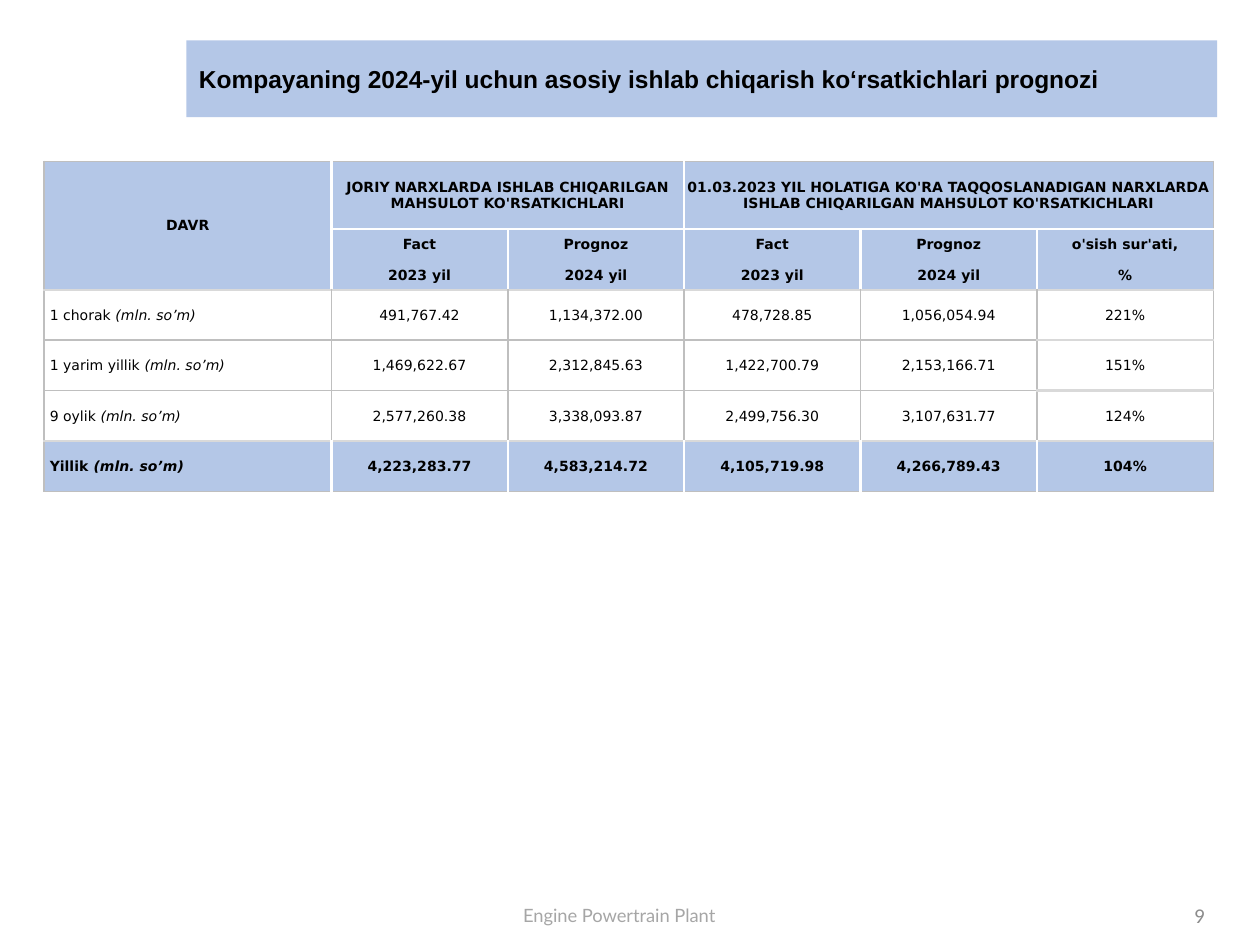
"""Build the slide with the 2024 production forecast table."""

from dataclasses import dataclass
from typing import Optional

import pptx
import pptx.dml.color
import pptx.enum.shapes
import pptx.enum.text
import pptx.oxml.ns
import pptx.slide
import pptx.table
import pptx.text.text
import pptx.util
from lxml import etree

COLORS = {
    "band": "B4C7E7",
    "body": "FFFFFF",
    "ink": "000000",
    "grid": "BFBFBF",
    "pale": "D9D9D9",
    "footer": "A6A6A6",
    "number": "8C8C8C",
}
SLIDE_WIDTH, SLIDE_HEIGHT = pptx.util.Inches(10), pptx.util.Inches(7.5)
GRID_COLUMNS, GRID_ROWS = 100, 75
COLUMN_SPANS = [22.8] + [14] * 5
ROW_SPANS = [5.4] + [2.4] * 2 + [4] * 4
HEADER_ROWS = 3
TOTAL_ROW = len(ROW_SPANS) - 1
LAST_COLUMN = len(COLUMN_SPANS) - 1
PLAIN_TABLE_STYLE = "{2D5ABB26-0587-4C30-8999-92F81FD0307C}"
ALIGN = pptx.enum.text.PP_ALIGN
MIDDLE = pptx.enum.text.MSO_ANCHOR.MIDDLE


@dataclass(frozen=True)
class Area:
    left: float
    top: float
    width: float
    height: float


@dataclass(frozen=True)
class TextStyle:
    font: str
    size: float
    color: str
    align: ALIGN = ALIGN.CENTER
    bold: bool = False


@dataclass(frozen=True)
class Caption:
    text: str
    area: Area
    style: TextStyle
    fill: Optional[str] = None


@dataclass(frozen=True)
class Border:
    color: str
    width: float


@dataclass(frozen=True)
class Heading:
    text: str
    row: int
    column: int
    last_row: int
    last_column: int


@dataclass(frozen=True)
class Period:
    name: str
    values: tuple[str, ...]


GREY, PALE, WHITE = Border("grid", 1), Border("pale", 1.5), Border("body", 1.5)

CAPTIONS = [
    Caption("Engine Powertrain Plant", Area(37.9, 71.2, 22.5, 2.8),
            TextStyle("Lato", 10.5, "footer")),
    Caption("Kompayaning 2024-yil uchun asosiy ishlab chiqarish ko‘rsatkichlari prognozi",
            Area(14.8, 3.2, 81.8, 6.1),
            TextStyle("Arial", 14, "ink", ALIGN.LEFT, True), "band"),
    Caption("9", Area(74.1, 70.6, 22.5, 4),
            TextStyle("Calibri", 12, "number", ALIGN.RIGHT)),
]
TABLE_AREA = Area(3.5, 12.8, sum(COLUMN_SPANS), sum(ROW_SPANS))
HEADINGS = [
    Heading("DAVR", 0, 0, 2, 0),
    Heading("JORIY NARXLARDA ISHLAB CHIQARILGAN MAHSULOT KO'RSATKICHLARI", 0, 1, 0, 2),
    Heading("01.03.2023 YIL HOLATIGA KO'RA TAQQOSLANADIGAN NARXLARDA "
            "ISHLAB CHIQARILGAN MAHSULOT KO'RSATKICHLARI", 0, 3, 0, 5),
]
MEASURES = [("Fact", "2023 yil"), ("Prognoz", "2024 yil")] * 2 + [("o'sish sur'ati,", "%")]
UNIT = "(mln. so’m)"
PERIODS = [
    Period("1 chorak", ("491,767.42", "1,134,372.00", "478,728.85", "1,056,054.94", "221%")),
    Period("1 yarim yillik",
           ("1,469,622.67", "2,312,845.63", "1,422,700.79", "2,153,166.71", "151%")),
    Period("9 oylik", ("2,577,260.38", "3,338,093.87", "2,499,756.30", "3,107,631.77", "124%")),
    Period("Yillik", ("4,223,283.77", "4,583,214.72", "4,105,719.98", "4,266,789.43", "104%")),
]


def across(columns: float) -> pptx.util.Emu:
    return pptx.util.Emu(round(SLIDE_WIDTH * columns / GRID_COLUMNS))


def down(rows: float) -> pptx.util.Emu:
    return pptx.util.Emu(round(SLIDE_HEIGHT * rows / GRID_ROWS))


def place(area: Area) -> tuple[pptx.util.Emu, ...]:
    return across(area.left), down(area.top), across(area.width), down(area.height)


def rgb(name: str) -> pptx.dml.color.RGBColor:
    return pptx.dml.color.RGBColor.from_string(COLORS[name])


def apply_style(paragraph: pptx.text.text._Paragraph, style: TextStyle) -> None:
    paragraph.alignment = style.align
    for run in paragraph.runs:
        run.font.name, run.font.size = style.font, pptx.util.Pt(style.size)
        run.font.bold = style.bold
        run.font.color.rgb = rgb(style.color)


def draw_caption(slide: pptx.slide.Slide, caption: Caption) -> None:
    if caption.fill:
        holder = slide.shapes.add_shape(
            pptx.enum.shapes.MSO_SHAPE.RECTANGLE, *place(caption.area))
        holder.shadow.inherit = False
        holder.fill.solid()
        holder.fill.fore_color.rgb = rgb(caption.fill)
        holder.line.fill.background()
    else:
        holder = slide.shapes.add_textbox(*place(caption.area))
    frame = holder.text_frame
    frame.word_wrap, frame.vertical_anchor = True, MIDDLE
    frame.text = caption.text
    apply_style(frame.paragraphs[0], caption.style)


def vertical_edge(row: int, edge: int) -> Border:
    inside = 0 < edge <= LAST_COLUMN
    return WHITE if inside and (row < HEADER_ROWS or row == TOTAL_ROW) else GREY


def horizontal_edge(edge: int, column: int) -> Optional[Border]:
    if edge == 2:
        return None
    if edge == 1:
        return WHITE
    if edge in (HEADER_ROWS, TOTAL_ROW):
        return PALE
    return PALE if column == LAST_COLUMN and 0 < edge < TOTAL_ROW else GREY


def draw_borders(cell: pptx.table._Cell, row: int, column: int) -> None:
    bottom = row + (cell.span_height if cell.is_merge_origin else 1)
    right = column + (cell.span_width if cell.is_merge_origin else 1)
    edges = {
        "a:lnL": vertical_edge(row, column),
        "a:lnR": vertical_edge(row, right),
        "a:lnT": horizontal_edge(row, column),
        "a:lnB": horizontal_edge(bottom, column),
    }
    qn = pptx.oxml.ns.qn
    properties = cell._tc.get_or_add_tcPr()
    for tag, border in edges.items():
        line = etree.SubElement(properties, qn(tag))
        if border is None:
            etree.SubElement(line, qn("a:noFill"))
            continue
        line.set("w", str(pptx.util.Pt(border.width)))
        fill = etree.SubElement(line, qn("a:solidFill"))
        etree.SubElement(fill, qn("a:srgbClr")).set("val", COLORS[border.color])


def format_cell(cell: pptx.table._Cell, row: int, column: int) -> None:
    banded = row < HEADER_ROWS or row == TOTAL_ROW
    label = column == 0 and row >= HEADER_ROWS
    draw_borders(cell, row, column)
    cell.fill.solid()
    cell.fill.fore_color.rgb = rgb("band" if banded else "body")
    cell.vertical_anchor = MIDDLE
    cell.margin_left = across(0.45 if label else 0.1)
    cell.margin_right, cell.margin_top, cell.margin_bottom = across(0.1), down(0.1), 0
    align = ALIGN.LEFT if label else ALIGN.CENTER
    apply_style(cell.text_frame.paragraphs[0],
                TextStyle("DejaVu Sans", 8, "ink", align, banded))


def draw_forecast(slide: pptx.slide.Slide) -> None:
    frame = slide.shapes.add_table(len(ROW_SPANS), len(COLUMN_SPANS), *place(TABLE_AREA))
    forecast = frame.table
    forecast.first_row = forecast.horz_banding = False
    forecast._tbl.tblPr.find(pptx.oxml.ns.qn("a:tableStyleId")).text = PLAIN_TABLE_STYLE
    for column, span in zip(forecast.columns, COLUMN_SPANS):
        column.width = across(span)
    for row, span in zip(forecast.rows, ROW_SPANS):
        row.height = down(span)
    for heading in HEADINGS:
        origin = forecast.cell(heading.row, heading.column)
        origin.merge(forecast.cell(heading.last_row, heading.last_column))
        origin.text_frame.text = heading.text
    for column, measure in enumerate(MEASURES, 1):
        for row, text in enumerate(measure, 1):
            forecast.cell(row, column).text_frame.text = text
    for row, period in enumerate(PERIODS, HEADER_ROWS):
        label = forecast.cell(row, 0).text_frame
        label.text = f"{period.name} "
        unit = label.paragraphs[0].add_run()
        unit.text, unit.font.italic = UNIT, True
        for column, value in enumerate(period.values, 1):
            forecast.cell(row, column).text_frame.text = value
    for row in range(len(ROW_SPANS)):
        for column in range(len(COLUMN_SPANS)):
            cell = forecast.cell(row, column)
            if not cell.is_spanned:
                format_cell(cell, row, column)


def main() -> None:
    deck = pptx.Presentation()
    deck.slide_width, deck.slide_height = SLIDE_WIDTH, SLIDE_HEIGHT
    slide = deck.slides.add_slide(deck.slide_layouts[6])
    for caption in CAPTIONS:
        draw_caption(slide, caption)
    draw_forecast(slide)
    deck.save("out.pptx")


if __name__ == "__main__":
    main()
